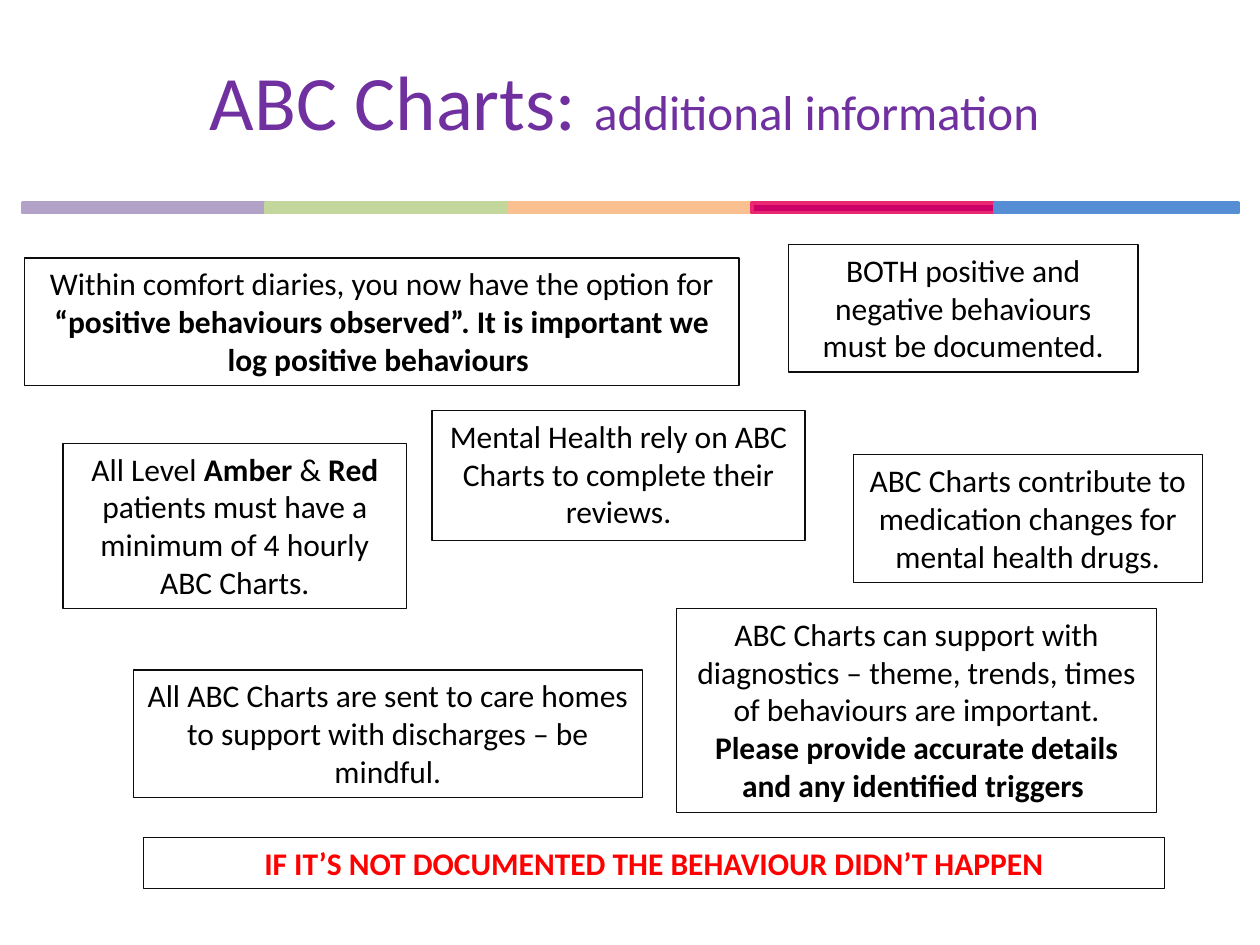
from pptx import Presentation
from pptx.dml.color import RGBColor
from pptx.enum.shapes import MSO_SHAPE
from pptx.enum.text import MSO_ANCHOR, MSO_AUTO_SIZE, PP_ALIGN
from pptx.util import Cm, Pt

RECT = MSO_SHAPE.RECTANGLE
MIDDLE, TOP = MSO_ANCHOR.MIDDLE, MSO_ANCHOR.TOP
CENTER = PP_ALIGN.CENTER
GROW = MSO_AUTO_SIZE.SHAPE_TO_FIT_TEXT

PURPLE = RGBColor(0x70, 0x30, 0xA0)
BLACK = RGBColor(0x00, 0x00, 0x00)
RED = RGBColor(0xFF, 0x00, 0x00)
BORDER = RGBColor(0x0D, 0x0D, 0x0D)
LILAC = RGBColor(0xB3, 0xA2, 0xC7)
GREEN = RGBColor(0xC3, 0xD6, 0x9B)
PEACH = RGBColor(0xFA, 0xC0, 0x90)
MAGENTA = RGBColor(0xCC, 0x00, 0x66)
PINK = RGBColor(0xEA, 0x28, 0x72)
BLUE = RGBColor(0x55, 0x8E, 0xD5)


def add_run(p, text, size=18, bold=False, color=BLACK):
    r = p.add_run()
    r.text = text
    r.font.name = "Calibri"
    r.font.size = Pt(size)
    r.font.bold = bold
    r.font.color.rgb = color


prs = Presentation()
prs.slide_width, prs.slide_height = Cm(25.4), Cm(19.05)
s = prs.slides.add_slide(prs.slide_layouts[6])

bar_width = 4.9
bars = [(LILAC, LILAC), (GREEN, GREEN), (PEACH, PEACH), (MAGENTA, PINK), (BLUE, BLUE)]
for i, (fill, line) in enumerate(bars):
    sp = s.shapes.add_shape(RECT, Cm(0.46 + i * bar_width), Cm(4.09), Cm(bar_width), Cm(0.2))
    sp.shadow.inherit = False
    sp.fill.solid()
    sp.fill.fore_color.rgb = fill
    sp.line.color.rgb = line
    sp.line.width = Pt(2)

title = s.shapes.add_textbox(Cm(1.27), Cm(1.12), Cm(22.86), Cm(1.8))
tf = title.text_frame
tf.word_wrap = True
tf.vertical_anchor = MIDDLE
p = tf.paragraphs[0]
p.alignment = CENTER
add_run(p, "ABC Charts: ", size=44, color=PURPLE)
add_run(p, "additional information ", size=28, color=PURPLE)

bold = {"bold": True}
notes = [
    (0.5, 5.2, 14.4, 2.57, [
        ("Within comfort diaries, you now have the option for ", {}),
        ("“positive behaviours observed”. It is important we log positive behaviours ", bold)]),
    (15.9, 4.93, 7.04, 2.57, [
        ("BOTH positive and negative behaviours must be documented.", {})]),
    (8.71, 8.28, 7.52, 2.62, [
        ("Mental Health rely on ABC Charts to complete their reviews.", {})]),
    (1.27, 8.94, 6.93, 3.33, [
        ("All Level ", {}), ("Amber", bold), (" & ", {}), ("Red", bold),
        (" patients must have a minimum of 4 hourly ABC Charts.", {})]),
    (17.2, 9.17, 7.04, 2.57, [
        ("ABC Charts contribute to medication changes for mental health drugs.", {})]),
    (2.69, 13.51, 10.26, 2.57, [
        ("All ABC Charts are sent to care homes to support with discharges – be mindful.", {})]),
    (13.64, 12.27, 9.68, 4.11, [
        ("ABC Charts can support with diagnostics – theme, trends, times of behaviours are important. ", {}),
        ("Please provide accurate details and any identified triggers ", bold)]),
    (2.9, 16.89, 20.57, 1.02, [
        ("IF IT’S NOT DOCUMENTED THE BEHAVIOUR DIDN’T HAPPEN", {"bold": True, "color": RED})]),
]
for left, top, width, height, runs in notes:
    sp = s.shapes.add_shape(RECT, Cm(left), Cm(top), Cm(width), Cm(height))
    sp.shadow.inherit = False
    sp.fill.background()
    sp.line.color.rgb = BORDER
    sp.line.width = Pt(0.75)
    tf = sp.text_frame
    tf.word_wrap = True
    tf.auto_size = GROW
    tf.vertical_anchor = TOP
    p = tf.paragraphs[0]
    p.alignment = CENTER
    for text, style in runs:
        add_run(p, text, **style)

prs.save("out.pptx")
